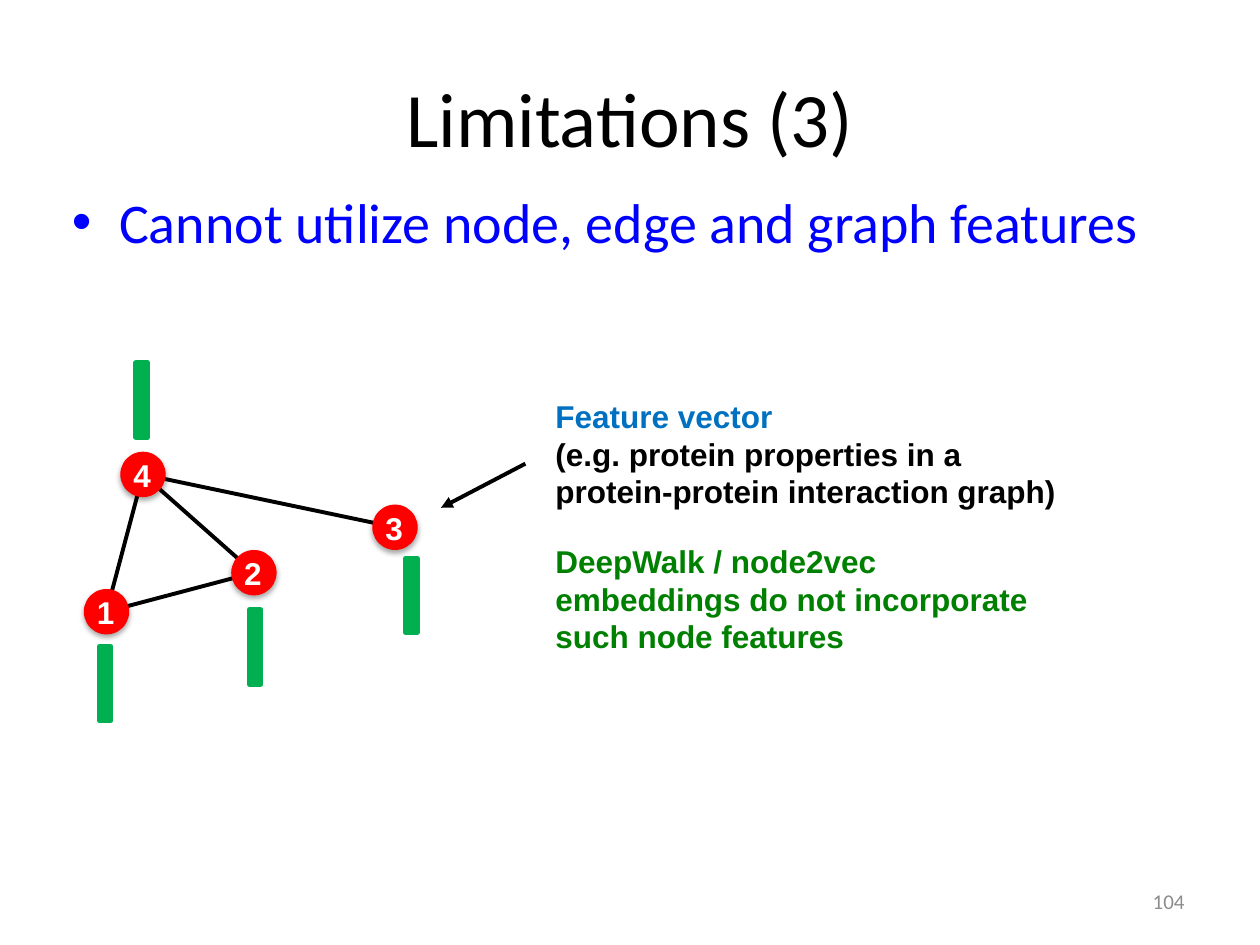
import pptx
import pptx.util
import pptx.dml.color
import pptx.enum.shapes
import pptx.enum.text
import pptx.oxml
import pptx.oxml.ns

Inches = pptx.util.Inches
Pt = pptx.util.Pt
RGBColor = pptx.dml.color.RGBColor
MSO_SHAPE = pptx.enum.shapes.MSO_SHAPE
PP_ALIGN = pptx.enum.text.PP_ALIGN
MSO_ANCHOR = pptx.enum.text.MSO_ANCHOR
qn = pptx.oxml.ns.qn

BLACK = RGBColor(0x00, 0x00, 0x00)
WHITE = RGBColor(0xFF, 0xFF, 0xFF)
RED = RGBColor(0xFF, 0x00, 0x00)
BLUE = RGBColor(0x00, 0x00, 0xFF)
GRAY = RGBColor(0x8C, 0x8C, 0x8C)
HEADING_BLUE = RGBColor(0x00, 0x70, 0xC0)
VECTOR_GREEN = RGBColor(0x00, 0xB0, 0x50)
NOTE_GREEN = RGBColor(0x00, 0x80, 0x00)

NODE_SIZE = 0.35
VECTOR_SIZE = (0.09, 0.59)
# name: (node left and top, feature vector left and top)
NODES = {
    "1": ((0.67, 4.68), (0.79, 5.13)),
    "4": ((0.96, 3.59), (1.08, 2.88)),
    "3": ((2.96, 4.01), (3.22, 4.43)),
    "2": ((1.84, 4.37), (1.98, 4.84)),
}
EDGES = [("4", "1"), ("4", "2"), ("1", "2"), ("3", "4")]

SHADOW_XML = (
    '<a:effectLst xmlns:a="http://schemas.openxmlformats.org/drawingml/2006/main">'
    '<a:outerShdw blurRad="39370" dist="22860" dir="5400000" rotWithShape="0">'
    '<a:srgbClr val="000000"><a:alpha val="35000"/></a:srgbClr>'
    '</a:outerShdw></a:effectLst>'
)


def set_font(paragraph, size, color, name="Arial", bold=True):
    font = paragraph.font
    font.size = Pt(size)
    font.name = name
    font.bold = bold
    font.color.rgb = color


def fill_placeholder(placeholder, box, text, size, color):
    placeholder.left, placeholder.top, placeholder.width, placeholder.height = map(Inches, box)
    placeholder.text_frame.text = text
    paragraph = placeholder.text_frame.paragraphs[0]
    paragraph.space_before = Pt(0)
    set_font(paragraph, size, color, "Calibri", False)


def add_text(slide, box, text, size, color, wrap=True, **font):
    """Add a text box; a newline in the text starts a new line."""
    frame = slide.shapes.add_textbox(*map(Inches, box)).text_frame
    frame.word_wrap = wrap
    paragraph = frame.paragraphs[0]
    paragraph.text = text.replace("\n", "\v")
    set_font(paragraph, size, color, **font)
    return frame


def add_filled_shape(slide, kind, box, color, line_width):
    shape = slide.shapes.add_shape(kind, *map(Inches, box))
    shape.shadow.inherit = False
    shape.fill.solid()
    shape.fill.fore_color.rgb = color
    shape.line.color.rgb = color
    shape.line.width = Pt(line_width)
    return shape


def add_line(slide, start, end, arrow=False):
    line = slide.shapes.add_connector(
        pptx.enum.shapes.MSO_CONNECTOR.STRAIGHT, *map(Inches, (*start, *end)))
    line.line.color.rgb = BLACK
    line.line.width = Pt(2.25)
    if arrow:
        pptx.oxml.ns  # namespace helpers
        head = line.line._get_or_add_ln().makeelement(qn("a:tailEnd"), {"type": "triangle"})
        line.line._get_or_add_ln().append(head)
    properties = line._element.spPr
    properties.append(properties.makeelement(qn("a:effectLst"), {}))


def node_center(name):
    left, top = NODES[name][0]
    return left + NODE_SIZE / 2, top + NODE_SIZE / 2


def add_node(slide, name):
    (left, top), vector_corner = NODES[name]
    circle = add_filled_shape(slide, MSO_SHAPE.OVAL, (left, top, NODE_SIZE, NODE_SIZE), RED, 0.75)
    properties = circle._element.spPr
    properties.replace(properties.find(qn("a:effectLst")), pptx.oxml.parse_xml(SHADOW_XML))
    add_text(slide, (left, top - 0.02, 0.34, 0.4), name, 18, WHITE)
    add_filled_shape(slide, MSO_SHAPE.RECTANGLE, (*vector_corner, *VECTOR_SIZE), VECTOR_GREEN, 3)


def add_graph(slide):
    for start, end in EDGES:
        add_line(slide, node_center(start), node_center(end))
    for name in NODES:
        add_node(slide, name)


def add_feature_notes(slide):
    add_line(slide, (4.17, 3.68), (3.5, 4.03), arrow=True)
    frame = add_text(slide, (4.31, 3.1, 4.21, 1.01), "Feature vector\n(e.g. protein properties in a\n"
                     "protein-protein interaction graph)", 18, BLACK, wrap=False)
    frame.paragraphs[0].runs[0].font.color.rgb = HEADING_BLUE
    add_text(slide, (4.31, 4.25, 4.04, 1.01),
             "DeepWalk / node2vec embeddings do not incorporate such node features", 18, NOTE_GREEN)


def main():
    presentation = pptx.Presentation()
    presentation.slide_width, presentation.slide_height = Inches(10), Inches(7.5)
    slide = presentation.slides.add_slide(presentation.slide_layouts[1])
    title, body = slide.placeholders
    fill_placeholder(title, (0.5, 0.3, 9, 1.25), "Limitations (3)", 44, BLACK)
    fill_placeholder(body, (0.47, 1.44, 9, 4.95),
                     "Cannot utilize node, edge and graph features", 32, BLUE)
    add_graph(slide)
    add_feature_notes(slide)
    number = add_text(slide, (7.17, 6.95, 2.33, 0.4), "104", 12, GRAY, name="Calibri", bold=False)
    number.vertical_anchor = MSO_ANCHOR.MIDDLE
    number.paragraphs[0].alignment = PP_ALIGN.RIGHT
    presentation.save("out.pptx")


if __name__ == "__main__":
    main()
